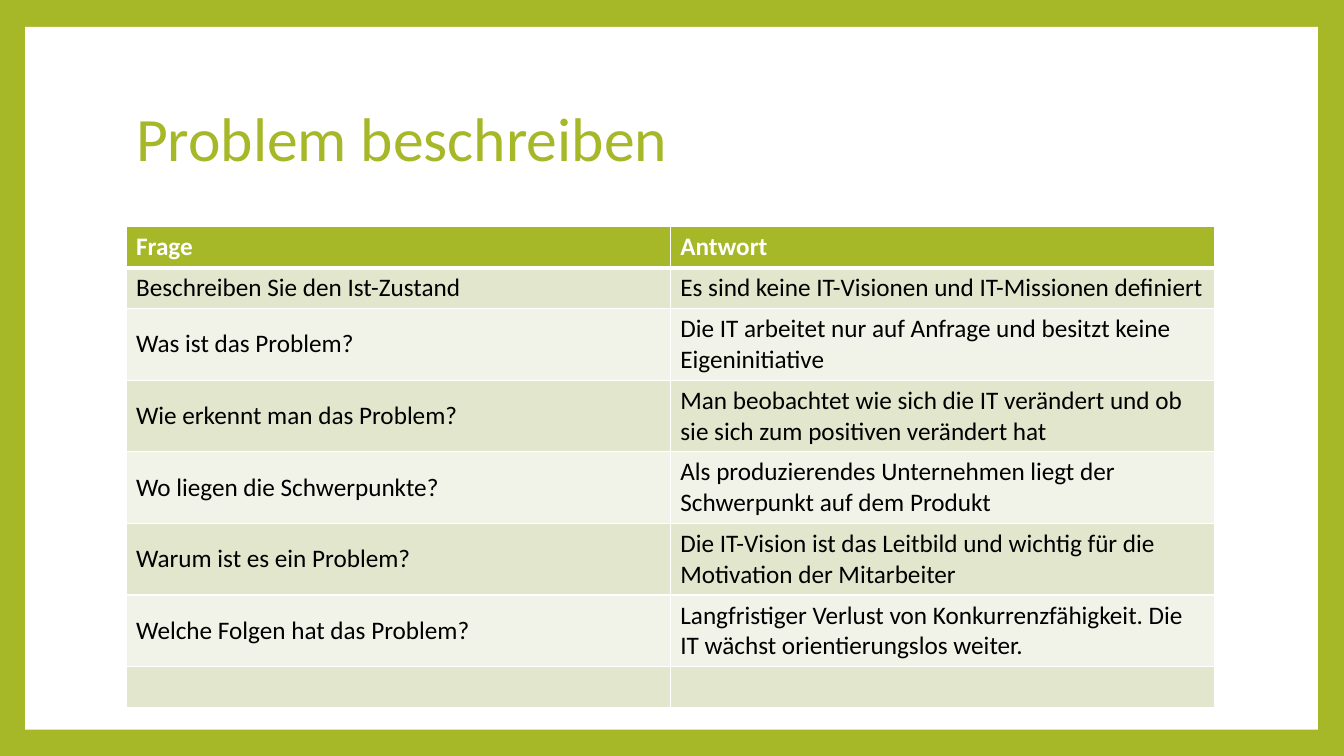
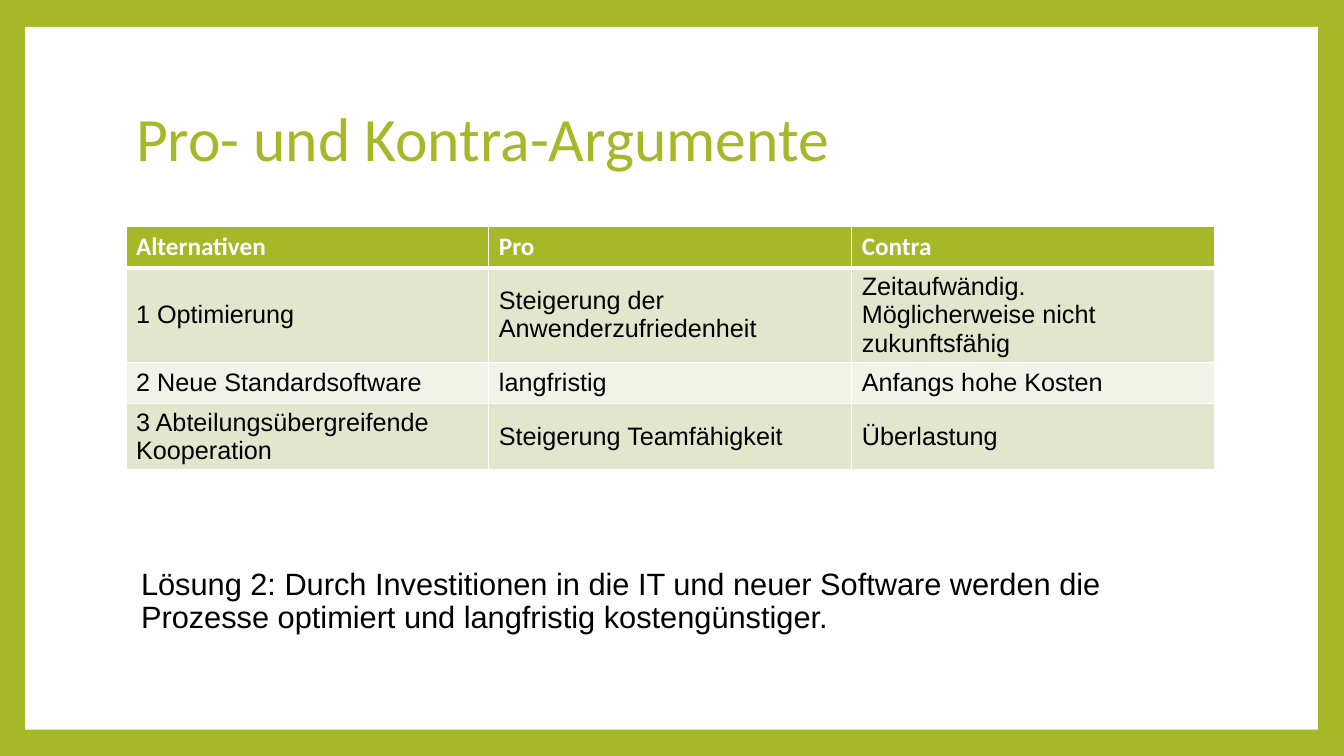
from lxml.etree import SubElement
from pptx import Presentation
from pptx.dml.color import RGBColor
from pptx.enum.shapes import MSO_SHAPE
from pptx.enum.text import MSO_ANCHOR, PP_ALIGN
from pptx.oxml.ns import qn
from pptx.util import Pt

GREEN, WHITE, BLACK = "A6B727", "FFFFFF", "000000"
BANDS = ("E1E6CD", "F1F3E8")
LEFT, WIDTH = 90, 777.6
TABLE_TOP, ROW_HEIGHT = 162, 29.2

PROBLEM_ROWS = [
    ("Frage", "Antwort"),
    ("Beschreiben Sie den Ist-Zustand",
     "Es sind keine IT-Visionen und IT-Missionen definiert"),
    ("Was ist das Problem?",
     "Die IT arbeitet nur auf Anfrage und besitzt keine Eigeninitiative"),
    ("Wie erkennt man das Problem?",
     "Man beobachtet wie sich die IT verändert und ob sie sich zum positiven verändert hat"),
    ("Wo liegen die Schwerpunkte?",
     "Als produzierendes Unternehmen liegt der Schwerpunkt auf dem Produkt"),
    ("Warum ist es ein Problem?",
     "Die IT-Vision ist das Leitbild und wichtig für die Motivation der Mitarbeiter"),
    ("Welche Folgen hat das Problem?",
     "Langfristiger Verlust von Konkurrenzfähigkeit. Die IT wächst orientierungslos weiter."),
    ("", ""),
]
ARGUMENT_ROWS = [
    ("Alternativen", "Pro", "Contra"),
    ("1 Optimierung", "Steigerung der Anwenderzufriedenheit",
     "Zeitaufwändig. Möglicherweise nicht zukunftsfähig"),
    ("2 Neue Standardsoftware", "langfristig", "Anfangs hohe Kosten"),
    ("3 Abteilungsübergreifende Kooperation", "Steigerung Teamfähigkeit", "Überlastung"),
]
SOLUTION = ("Lösung 2: Durch Investitionen in die IT und neuer Software werden die "
            "Prozesse optimiert und langfristig kostengünstiger.")


def set_fill(fill, color):
    """Make a fill solid in the given hex colour."""
    fill.solid()
    fill.fore_color.rgb = RGBColor.from_string(color)


def set_font(paragraph, name, size, color, bold=False):
    """Set the font of a whole paragraph."""
    font = paragraph.font
    font.name, font.size, font.bold = name, Pt(size), bold
    font.color.rgb = RGBColor.from_string(color)


def add_panel(slide):
    """Add the white panel behind the title, leaving a green frame."""
    panel = slide.shapes.add_shape(
        MSO_SHAPE.RECTANGLE, Pt(18), Pt(19.2), Pt(923.4), Pt(502))
    set_fill(panel.fill, WHITE)
    panel.line.fill.background()
    panel.shadow.inherit = False
    slide.shapes.title._element.addprevious(panel._element)


def add_slide(presentation, title):
    """Add a framed title-only slide with a formatted title."""
    slide = presentation.slides.add_slide(presentation.slide_layouts[5])
    set_fill(slide.background.fill, GREEN)
    add_panel(slide)
    shape = slide.shapes.title
    shape.left, shape.top, shape.width, shape.height = map(Pt, (LEFT, 48, WIDTH, 106.4))
    shape.text_frame.text = title
    shape.text_frame.vertical_anchor = MSO_ANCHOR.MIDDLE
    paragraph = shape.text_frame.paragraphs[0]
    paragraph.alignment = PP_ALIGN.LEFT
    paragraph.line_spacing = 0.9
    set_font(paragraph, "Calibri", 44, GREEN)
    return slide


def add_borders(cell, top, bottom):
    """Draw white cell borders with the given top and bottom widths."""
    properties = cell._tc.get_or_add_tcPr()
    for side, width in zip("LRTB", (1, 1, top, bottom)):
        line = SubElement(properties, qn(f"a:ln{side}"), w=str(Pt(width)))
        SubElement(SubElement(line, qn("a:solidFill")), qn("a:srgbClr"), val=WHITE)


def add_table(slide, rows, body_font):
    """Add a table with a green header and banded rows."""
    columns = len(rows[0])
    table = slide.shapes.add_table(
        len(rows), columns, Pt(LEFT), Pt(TABLE_TOP), Pt(WIDTH),
        Pt(ROW_HEIGHT * len(rows))).table
    for column in table.columns:
        column.width = Pt(WIDTH / columns)
    for index, texts in enumerate(rows):
        header = index == 0
        table.rows[index].height = Pt(ROW_HEIGHT)
        for cell, text in zip(table.rows[index].cells, texts):
            add_borders(cell, 3 if index == 1 else 1, 3 if header else 1)
            set_fill(cell.fill, GREEN if header else BANDS[(index - 1) % 2])
            cell.vertical_anchor = MSO_ANCHOR.MIDDLE
            if text:
                cell.text = text
                set_font(cell.text_frame.paragraphs[0], "Calibri" if header else body_font,
                         18, WHITE if header else BLACK, header)


def add_conclusion(slide, text):
    """Add the concluding text below the table."""
    box = slide.shapes.add_textbox(Pt(LEFT), Pt(402.5), Pt(WIDTH), Pt(118.8))
    frame = box.text_frame
    frame.word_wrap = True
    frame.margin_left = Pt(10.8)
    frame.text = text
    paragraph = frame.paragraphs[0]
    paragraph.line_spacing = 0.9
    set_font(paragraph, "Arial", 22, BLACK)


def main():
    """Build and save the presentation."""
    presentation = Presentation()
    presentation.slide_width, presentation.slide_height = Pt(960), Pt(540)

    problem = add_slide(presentation, "Problem beschreiben")
    add_table(problem, PROBLEM_ROWS, "Calibri")

    arguments = add_slide(presentation, "Pro- und Kontra-Argumente")
    add_table(arguments, ARGUMENT_ROWS, "Arial")
    add_conclusion(arguments, SOLUTION)

    presentation.save("out.pptx")


if __name__ == "__main__":
    main()
